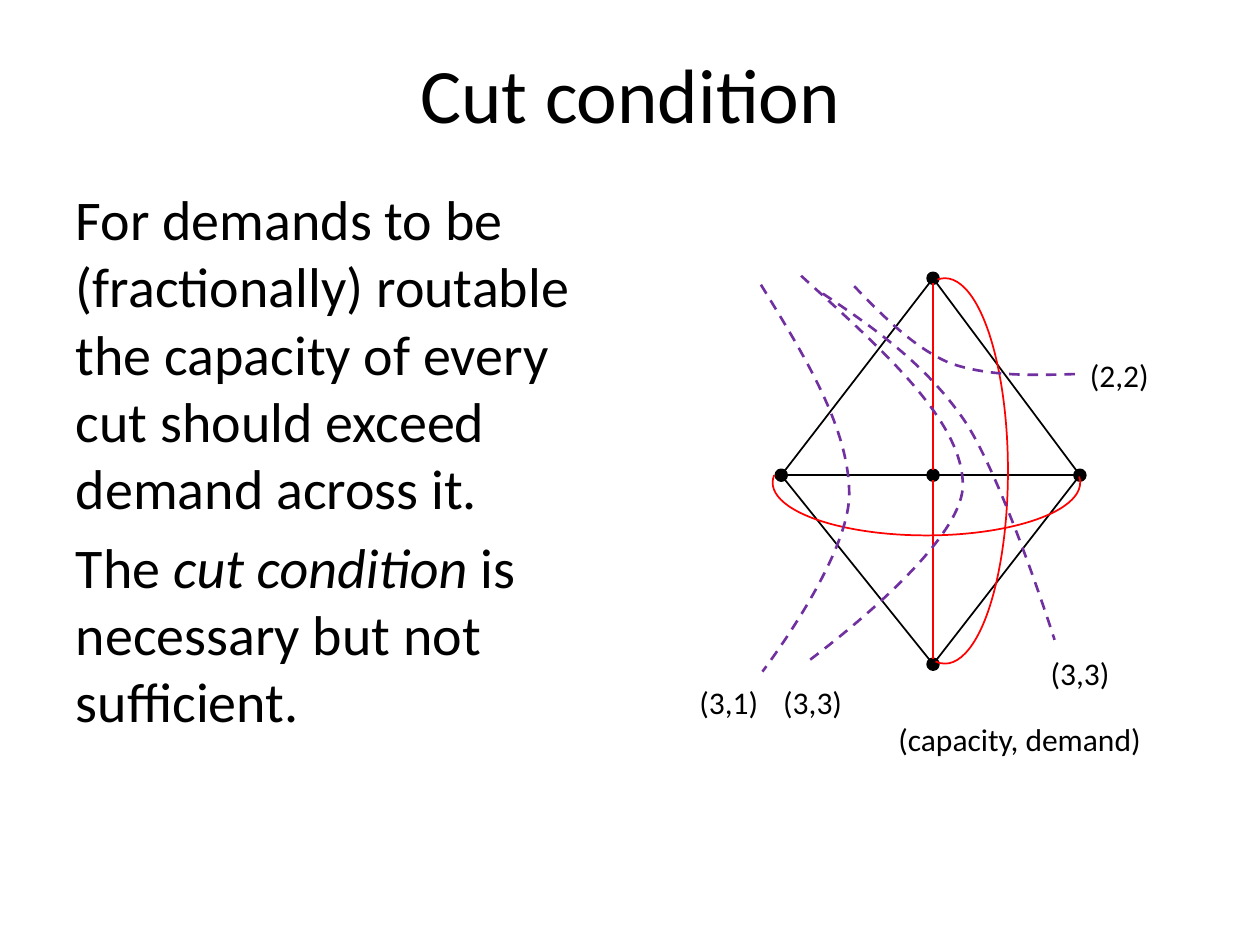
from math import hypot

from lxml import etree
from pptx import Presentation
from pptx import util as u
from pptx.dml.color import RGBColor
from pptx.enum import dml, shapes, text
from pptx.oxml.ns import qn

BLACK = RGBColor(0x00, 0x00, 0x00)
RED = RGBColor(0xFF, 0x00, 0x00)
PURPLE = RGBColor(0x70, 0x30, 0xA0)
FONT = "Calibri"

# Graph geometry in cm, relative to the graph box
NODE_SIZE = 0.2
NODES = {
    "top": (5.01, 0.11),
    "left": (1.95, 4.08),
    "centre": (5.01, 4.08),
    "right": (7.97, 4.08),
    "bottom": (5.01, 7.89),
}
CAPACITY_EDGES = [("top", "left"), ("top", "right"), ("left", "bottom"),
                  ("right", "bottom"), ("right", "centre"), ("left", "centre")]
DEMAND_EDGES = [("centre", "top"), ("bottom", "centre")]
DEMAND_ARCS = [(3.98, 0.11, 2.54, 7.77, 0), (3.81, 1.13, 2.13, 6.20, 90)]
# Each cut: start, then control, control, end for two Bézier segments
CUTS = [
    [(1.54, 0.24), (2.43, 1.69), (3.32, 3.14), (3.32, 4.46),
     (3.32, 5.75), (1.57, 8.04), (1.57, 8.04)],
    [(2.35, 0.06), (3.98, 1.54), (5.61, 2.98), (5.61, 4.28),
     (5.61, 5.57), (2.41, 7.89), (2.41, 7.89)],
    [(2.79, 0.42), (3.80, 1.10), (4.84, 1.82), (5.63, 2.96),
     (6.42, 4.13), (7.46, 7.40), (7.46, 7.40)],
    [(3.42, 0.27), (4.01, 0.88), (4.62, 1.51), (5.35, 1.82),
     (6.11, 2.09), (7.00, 2.07), (7.92, 2.04)],
]
LABELS = [
    ("(capacity, demand)", 4.06, 8.90, 5.46),
    ("(3,1)", 0.05, 8.14, 1.70),
    ("(3,3)", 1.74, 8.14, 1.70),
    ("(3,3)", 7.13, 7.55, 1.70),
    ("(2,2)", 7.92, 1.55, 1.70),
]


def add_text(s, box, paragraphs, size, wrap=True):
    """Each paragraph is a list of (text, italic) runs."""
    tb = s.shapes.add_textbox(*map(u.Cm, box))
    tf = tb.text_frame
    tf.word_wrap = wrap
    for i, runs in enumerate(paragraphs):
        p = tf.paragraphs[0] if i == 0 else tf.add_paragraph()
        for words, italic in runs:
            r = p.add_run()
            r.text = words
            r.font.name = FONT
            r.font.size = u.Pt(size)
            r.font.italic = italic
            r.font.color.rgb = BLACK
    return tf


def add_title(s, box):
    tf = add_text(s, box, [[("Cut condition", False)]], 44)
    tf.vertical_anchor = text.MSO_ANCHOR.MIDDLE
    tf.paragraphs[0].alignment = text.PP_ALIGN.CENTER


def add_body(s, box):
    tf = add_text(s, box, [
        [("For demands to be (fractionally) routable the capacity of every "
          "cut should exceed demand across it.", False)],
        [("The ", False), ("cut condition ", True),
         ("is necessary but not sufficient.", False)],
    ], 32)
    for p in tf.paragraphs:
        p.space_before = u.Pt(6.4)


def style_outline(sp, color, width):
    sp.shadow.inherit = False
    sp.fill.background()
    sp.line.color.rgb = color
    sp.line.width = u.Pt(width)


def add_node(s, x, y):
    d = u.Cm(NODE_SIZE)
    sp = s.shapes.add_shape(shapes.MSO_SHAPE.OVAL, u.Cm(x - NODE_SIZE / 2),
                            u.Cm(y - NODE_SIZE / 2), d, d)
    style_outline(sp, BLACK, 2)
    sp.fill.solid()
    sp.fill.fore_color.rgb = BLACK


def add_edge(s, start, end, color):
    """Line between two node centres, trimmed to the node rims."""
    (x1, y1), (x2, y2) = start, end
    trim = NODE_SIZE / 2 / hypot(x2 - x1, y2 - y1)
    dx, dy = (x2 - x1) * trim, (y2 - y1) * trim
    ends = (x1 + dx, y1 + dy, x2 - dx, y2 - dy)
    ln = s.shapes.add_connector(shapes.MSO_CONNECTOR.STRAIGHT, *map(u.Cm, ends))
    ln.line.color.rgb = color
    ln.line.width = u.Pt(1)
    etree.SubElement(ln._element.spPr, qn("a:effectLst"))


def add_demand_arc(s, box, rotation):
    sp = s.shapes.add_shape(shapes.MSO_SHAPE.ARC, *map(u.Cm, box))
    sp.adjustments[0], sp.adjustments[1] = 160.65, 55.7
    sp.rotation = rotation
    style_outline(sp, RED, 1)


def bend_path(sp):
    """Turn every three line segments of a freeform into one Bézier segment."""
    path = next(sp._element.iter(qn("a:path")))
    lines = path.findall(qn("a:lnTo"))
    for i in range(0, len(lines), 3):
        curve = etree.SubElement(path, qn("a:cubicBezTo"))
        for line in lines[i:i + 3]:
            curve.append(line[0])
            path.remove(line)


def add_cut(s, curve):
    points = [(u.Cm(x), u.Cm(y)) for x, y in curve]
    fb = s.shapes.build_freeform(*points[0])
    fb.add_line_segments(points[1:], close=False)
    sp = fb.convert_to_shape()
    bend_path(sp)
    style_outline(sp, PURPLE, 1.5)
    sp.line.dash_style = dml.MSO_LINE.DASH


def add_graph(s, left, top):
    def at(point):
        return left + point[0], top + point[1]

    for point in NODES.values():
        add_node(s, *at(point))
    for edges, color in ((CAPACITY_EDGES, BLACK), (DEMAND_EDGES, RED)):
        for a, b in edges:
            add_edge(s, at(NODES[a]), at(NODES[b]), color)
    for x, y, w, h, rotation in DEMAND_ARCS:
        add_demand_arc(s, (*at((x, y)), w, h), rotation)
    for curve in CUTS:
        add_cut(s, [at(point) for point in curve])
    for words, x, y, w in LABELS:
        add_text(s, (*at((x, y)), w, 1.02), [[(words, False)]], 18, wrap=False)


def main():
    prs = Presentation()
    prs.slide_width, prs.slide_height = u.Cm(25.4), u.Cm(19.05)
    s = prs.slides.add_slide(prs.slide_layouts[6])
    add_title(s, (1.28, 0.76, 22.86, 2.21))
    add_body(s, (1.28, 3.6, 11.43, 13.77))
    add_graph(s, 13.8, 5.5)
    prs.save("out.pptx")


if __name__ == "__main__":
    main()
